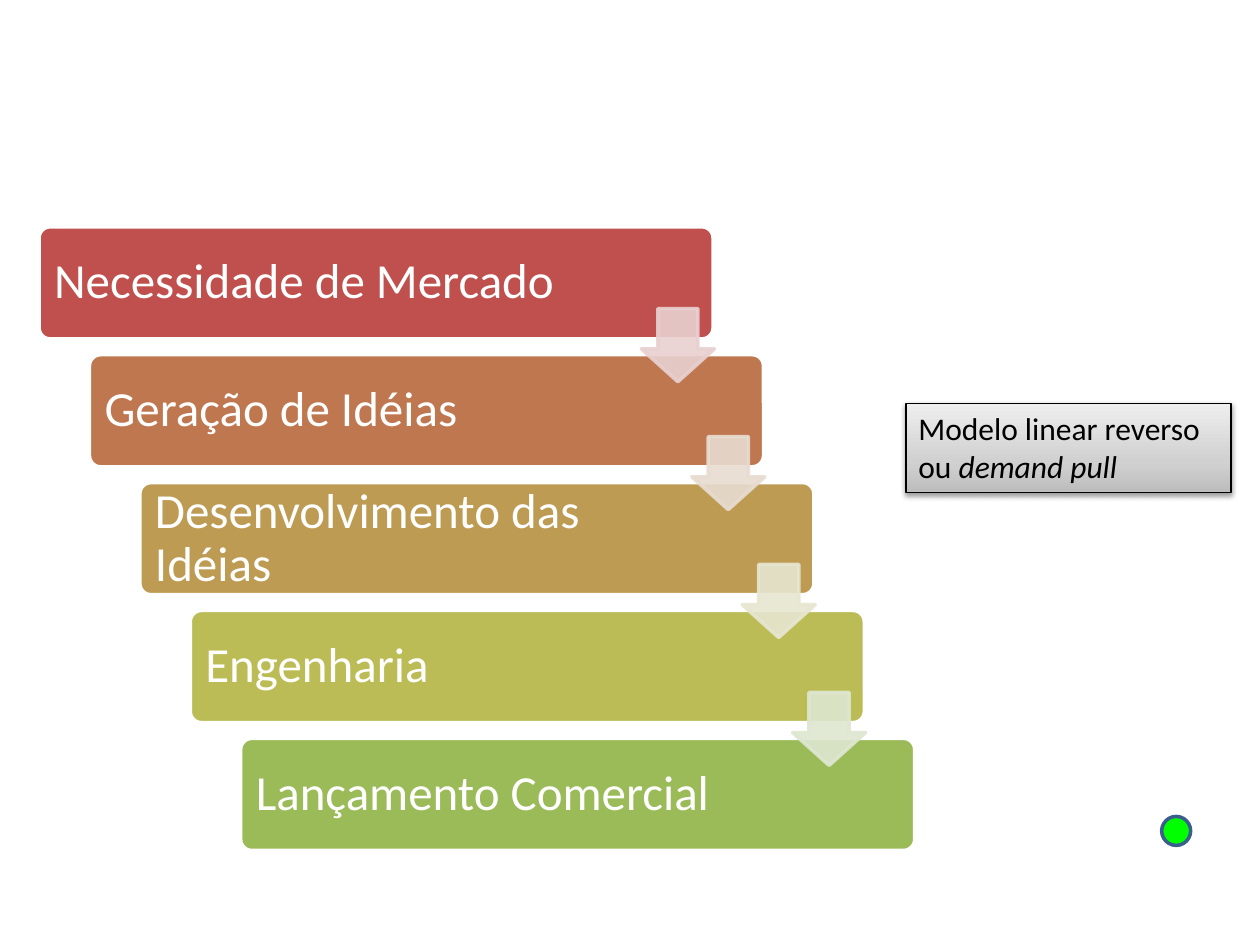
import pptx
import pptx.dml.color
import pptx.enum.shapes
import pptx.enum.text
import pptx.oxml
import pptx.oxml.ns
import pptx.util

Inches = pptx.util.Inches
Pt = pptx.util.Pt
SHAPE = pptx.enum.shapes.MSO_SHAPE
qn = pptx.oxml.ns.qn

COLORS = {
    "white": "FFFFFF",
    "black": "000000",
    "marker": "00FF00",
    "marker_line": "3A5F8C",
    "note_dark": "BDBDBD",
    "note_mid": "D1D1D1",
    "note_light": "EEEEEE",
    "step_1": "C0504D",
    "step_2": "BF7750",
    "step_3": "BD9B53",
    "step_4": "BCBC56",
    "step_5": "9BBB59",
    "arrow_1": "E8D0D0",
    "arrow_2": "E8DCD0",
    "arrow_3": "E7E6D1",
    "arrow_4": "DEE7D1",
}
STEPS = [
    "Necessidade de Mercado",
    "Geração de Idéias",
    "Desenvolvimento das Idéias",
    "Engenharia",
    "Lançamento Comercial",
]


def rgb(name):
    return pptx.dml.color.RGBColor.from_string(COLORS[name])


def xml(tag, content):
    namespace = pptx.oxml.ns.nsdecls("a")
    return pptx.oxml.parse_xml(f"<a:{tag} {namespace}>{content}</a:{tag}>")


def add_filled(slide, kind, box, fill, line, width=2):
    filled = slide.shapes.add_shape(kind, *box)
    filled.shadow.inherit = False
    filled.fill.solid()
    filled.fill.fore_color.rgb = rgb(fill)
    filled.line.color.rgb = rgb(line)
    filled.line.width = Pt(width)
    return filled


def format_runs(paragraph, size, color):
    for run in paragraph.runs:
        run.font.name = "Calibri"
        run.font.size = Pt(size)
        run.font.color.rgb = rgb(color)


def add_step(slide, box, label, color):
    left, top, width, height = box
    bar = add_filled(slide, SHAPE.ROUNDED_RECTANGLE, box, color, "white")
    bar.adjustments[0] = 0.1
    caption = slide.shapes.add_textbox(left, top, Inches(4.38), height)
    frame = caption.text_frame
    frame.word_wrap = True
    frame.vertical_anchor = pptx.enum.text.MSO_ANCHOR.MIDDLE
    frame.margin_left = frame.margin_right = Inches(0.12)
    frame.margin_top = frame.margin_bottom = Inches(0.12)
    frame.text = label
    frame.paragraphs[0].line_spacing = 0.9
    format_runs(frame.paragraphs[0], 28, "white")


def add_step_arrow(slide, box, color):
    arrow = add_filled(slide, SHAPE.DOWN_ARROW, box, color, color)
    arrow.adjustments[0] = 0.55
    arrow.adjustments[1] = 0.45
    for tint in arrow._element.spPr.iter(qn("a:srgbClr")):
        tint.append(pptx.oxml.parse_xml(
            f'<a:alpha {pptx.oxml.ns.nsdecls("a")} val="90000"/>'))


def add_staircase(slide, box):
    left, top, width, height = box
    step_width, step_height = Inches(5.35), Inches(0.89)
    arrow_size = Inches(0.58)
    gaps = len(STEPS) - 1
    shift_x = (width - step_width) // gaps
    shift_y = (height - step_height) // gaps
    for i, label in enumerate(STEPS):
        step = (left + i * shift_x, top + i * shift_y, step_width, step_height)
        add_step(slide, step, label, f"step_{i + 1}")
    for i in range(gaps):
        arrow = (left + Inches(4.78) + i * shift_x,
                 top + Inches(0.65) + i * shift_y, arrow_size, arrow_size)
        add_step_arrow(slide, arrow, f"arrow_{i + 1}")


def add_model_note(slide, box):
    note = add_filled(slide, SHAPE.RECTANGLE, box, "note_mid", "black", 0.75)
    properties = note._element.spPr
    stops = "".join(
        f'<a:gs pos="{position * 1000}"><a:srgbClr val="{COLORS[name]}"/></a:gs>'
        for position, name in [(0, "note_dark"), (35, "note_mid"), (100, "note_light")])
    gradient = xml("gradFill", f'<a:gsLst>{stops}</a:gsLst><a:lin ang="16200000" scaled="0"/>')
    properties.replace(properties.find(qn("a:solidFill")), gradient)
    shadow = xml("effectLst", (
        f'<a:outerShdw blurRad="{Pt(3.1)}" dist="{Pt(1.6)}" dir="5400000" rotWithShape="0">'
        f'<a:srgbClr val="{COLORS["black"]}"><a:alpha val="38000"/></a:srgbClr></a:outerShdw>'))
    properties.replace(properties.find(qn("a:effectLst")), shadow)

    frame = note.text_frame
    frame.word_wrap = True
    frame.auto_size = pptx.enum.text.MSO_AUTO_SIZE.SHAPE_TO_FIT_TEXT
    frame.vertical_anchor = pptx.enum.text.MSO_ANCHOR.TOP
    frame.text = "Modelo linear reverso ou "
    sentence = frame.paragraphs[0]
    sentence.alignment = pptx.enum.text.PP_ALIGN.LEFT
    term = sentence.add_run()
    term.text = "demand pull"
    term.font.italic = True
    format_runs(sentence, 18, "black")


def main():
    deck = pptx.Presentation()
    deck.slide_width, deck.slide_height = Inches(10), Inches(7.5)
    slide = deck.slides.add_slide(deck.slide_layouts[6])
    add_staircase(slide, (Inches(0.31), Inches(1.8), Inches(6.95), Inches(4.95)))
    add_model_note(slide, (Inches(7.19), Inches(3.2), Inches(2.58), Inches(0.71)))
    marker = (Inches(9.22), Inches(6.48), Inches(0.23), Inches(0.23))
    add_filled(slide, SHAPE.OVAL, marker, "marker", "marker_line")
    deck.save("out.pptx")


if __name__ == "__main__":
    main()
